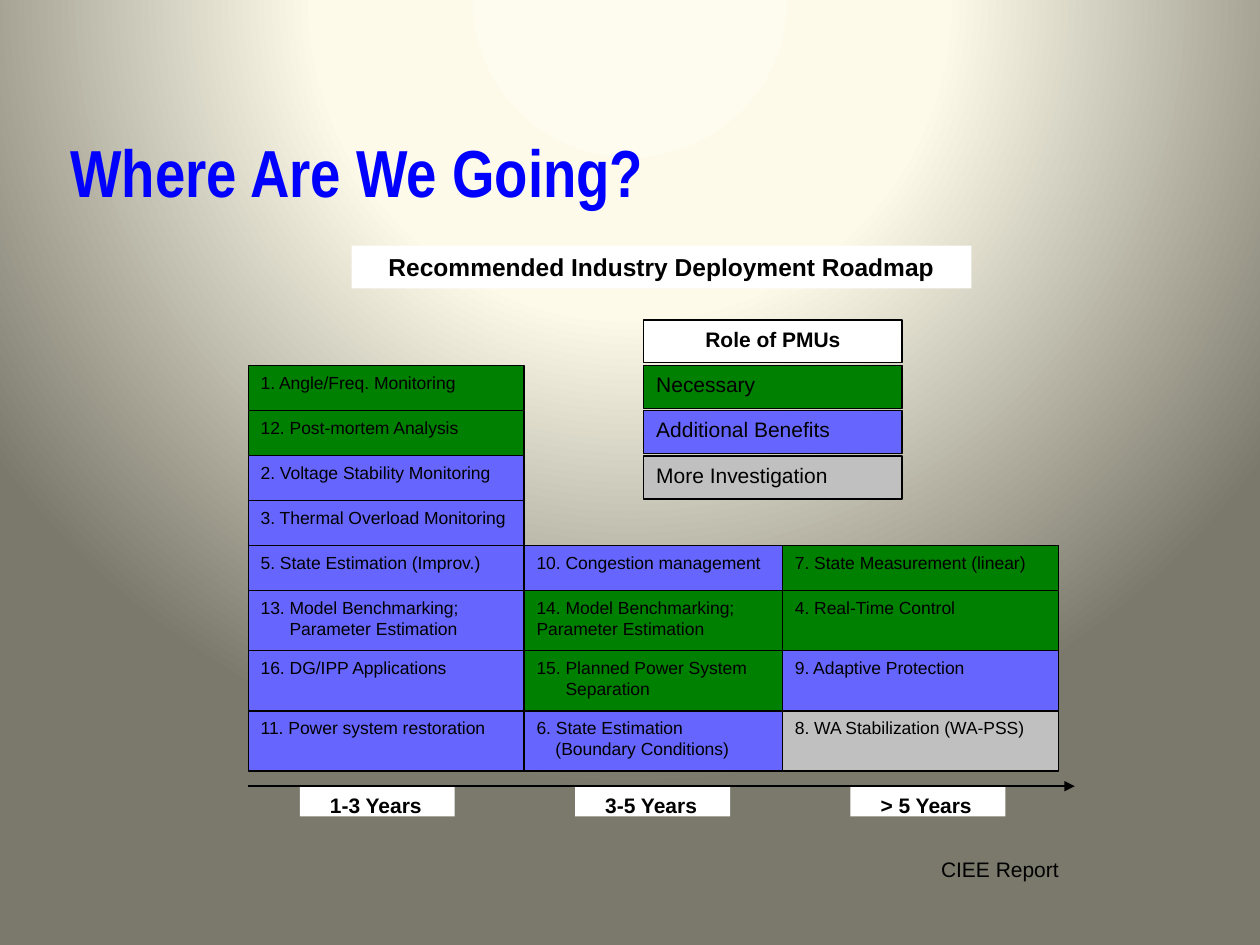
import pptx
import pptx.util
import pptx.dml.color
import pptx.enum.shapes
import pptx.enum.text
import pptx.oxml
import pptx.oxml.ns

Inches, Pt = pptx.util.Inches, pptx.util.Pt
RGBColor = pptx.dml.color.RGBColor
PP_ALIGN, MSO_ANCHOR = pptx.enum.text.PP_ALIGN, pptx.enum.text.MSO_ANCHOR
MSO_SHAPE = pptx.enum.shapes.MSO_SHAPE

BLACK = RGBColor(0x00, 0x00, 0x00)
WHITE = RGBColor(0xFF, 0xFF, 0xFF)
BLUE = RGBColor(0x00, 0x00, 0xFF)
NECESSARY = RGBColor(0x00, 0x80, 0x00)
BENEFITS = RGBColor(0x66, 0x66, 0xFF)
INVESTIGATE = RGBColor(0xC0, 0xC0, 0xC0)
BACKDROP = [
    (0, RGBColor(0xFE, 0xFC, 0xEE)),
    (40, RGBColor(0xFD, 0xFA, 0xEA)),
    (100, RGBColor(0x7B, 0x79, 0x6B)),
]

TITLE = "Where Are We Going?"
HEADING = "Recommended Industry Deployment Roadmap"
SOURCE = "CIEE Report"
LEGEND = [
    ("Role of PMUs", WHITE),
    ("Necessary", NECESSARY),
    ("Additional Benefits", BENEFITS),
    ("More Investigation", INVESTIGATE),
]
COLUMNS = [
    ("1-3 Years", 2.19, [
        (["1. Angle/Freq. Monitoring"], NECESSARY),
        (["12. Post-mortem Analysis"], NECESSARY),
        (["2. Voltage Stability Monitoring"], BENEFITS),
        (["3. Thermal Overload Monitoring"], BENEFITS),
        (["5. State Estimation (Improv.)"], BENEFITS),
        (["13. Model Benchmarking;", "Parameter Estimation"], BENEFITS),
        (["16. DG/IPP Applications"], BENEFITS),
        (["11. Power system restoration"], BENEFITS),
    ]),
    ("3-5 Years", 2.05, [
        (["10. Congestion management"], BENEFITS),
        (["14. Model Benchmarking; Parameter Estimation"], NECESSARY),
        (["15. Planned Power System", "Separation"], NECESSARY),
        (["6. State Estimation", "(Boundary Conditions)"], BENEFITS),
    ]),
    ("> 5 Years", 2.19, [
        (["7. State Measurement (linear)"], NECESSARY),
        (["4. Real-Time Control"], NECESSARY),
        (["9. Adaptive Protection"], BENEFITS),
        (["8. WA Stabilization (WA-PSS)"], INVESTIGATE),
    ]),
]

LEFT, TOP, HEIGHT = 1.97, 2.9, 3.22
ROW_UNITS = [3] * 5 + [4] * 3
UNIT = HEIGHT / sum(ROW_UNITS)
AXIS_Y, AXIS_END = 6.24, 8.53
YEAR_LEFT, YEAR_PITCH = 2.38, 2.185
LEGEND_TOP, LEGEND_PITCH = 2.54, 0.36


def write(s, lines, size, bold=False, align=PP_ALIGN.LEFT, indents=(0, 0),
          color=BLACK, name="Arial", anchor=MSO_ANCHOR.TOP):
    tf = s.text_frame
    tf.word_wrap = True
    tf.auto_size = pptx.enum.text.MSO_AUTO_SIZE.NONE
    tf.vertical_anchor = anchor
    for i, line in enumerate(lines):
        p = tf.paragraphs[0] if i == 0 else tf.add_paragraph()
        p.alignment = align
        if indents[i]:
            p._p.get_or_add_pPr().set("marL", str(Inches(indents[i])))
        r = p.add_run()
        r.text = line
        for key, value in dict(size=Pt(size), bold=bold, name=name).items():
            setattr(r.font, key, value)
        r.font.color.rgb = color


def add_box(slide, at, fill, outlined=True):
    s = slide.shapes.add_shape(MSO_SHAPE.RECTANGLE, *map(Inches, at))
    s.shadow.inherit = False
    s.fill.solid()
    s.fill.fore_color.rgb = fill
    if outlined:
        s.line.color.rgb = BLACK
        s.line.width = Pt(0.75)
    else:
        s.line.fill.background()
    return s


def set_background(slide):
    stops = "".join(f'<a:gs pos="{pos * 1000}"><a:srgbClr val="{color}"/></a:gs>'
                    for pos, color in BACKDROP)
    bg = pptx.oxml.parse_xml(
        f'<p:bg {pptx.oxml.ns.nsdecls("p", "a")}><p:bgPr><a:gradFill rotWithShape="1">'
        f'<a:gsLst>{stops}</a:gsLst><a:path path="circle">'
        '<a:fillToRect l="50000" t="-80000" r="50000" b="180000"/></a:path>'
        '</a:gradFill><a:effectLst/></p:bgPr></p:bg>')
    slide._element.cSld.insert(0, bg)


def add_roadmap(slide):
    x = LEFT
    for col, (years, width, cells) in enumerate(COLUMNS):
        first = len(ROW_UNITS) - len(cells)
        for row, (lines, fill) in enumerate(cells, first):
            y = TOP + UNIT * sum(ROW_UNITS[:row])
            s = add_box(slide, (x, y, width, UNIT * ROW_UNITS[row]), fill)
            hang = 0.15 if lines[0].startswith("6.") else 0.23
            write(s, lines, 10, indents=(0, hang))
        s = add_box(slide, (YEAR_LEFT + col * YEAR_PITCH, AXIS_Y, 1.23, 0.24), WHITE, False)
        write(s, [years], 12, bold=True, indents=(0.14,))
        x += width


def add_legend(slide):
    for i, (label, fill) in enumerate(LEGEND):
        s = add_box(slide, (5.11, LEGEND_TOP + i * LEGEND_PITCH, 2.05, 0.34), fill)
        write(s, [label], 12, bold=i == 0, align=PP_ALIGN.LEFT if i else PP_ALIGN.CENTER)


def add_axis(slide):
    s = slide.shapes.add_connector(
        pptx.enum.shapes.MSO_CONNECTOR.STRAIGHT,
        *map(Inches, (LEFT, AXIS_Y, AXIS_END, AXIS_Y)))
    s.line.color.rgb = BLACK
    s.line.width = Pt(1)
    ns = pptx.oxml.ns.nsdecls("a")
    s.line._get_or_add_ln().append(pptx.oxml.parse_xml(f'<a:tailEnd {ns} type="triangle"/>'))
    s._element.spPr.append(pptx.oxml.parse_xml(f"<a:effectLst {ns}/>"))


def main():
    prs = pptx.Presentation()
    prs.slide_width, prs.slide_height = Inches(10), Inches(7.5)
    slide = prs.slides.add_slide(prs.slide_layouts[5])
    set_background(slide)
    title = slide.shapes.title
    title.left, title.top, title.width, title.height = map(Inches, (0.46, 0.86, 7.25, 1))
    write(title, [TITLE], 38, bold=True, color=BLUE, name="Arial Narrow",
          anchor=MSO_ANCHOR.MIDDLE)
    s = add_box(slide, (2.79, 1.95, 4.92, 0.34), WHITE, False)
    write(s, [HEADING], 14, bold=True, align=PP_ALIGN.CENTER)
    add_roadmap(slide)
    add_legend(slide)
    add_axis(slide)
    s = slide.shapes.add_textbox(*map(Inches, (7.37, 6.75, 1.29, 0.3)))
    write(s, [SOURCE], 12)
    prs.save("out.pptx")


if __name__ == "__main__":
    main()
